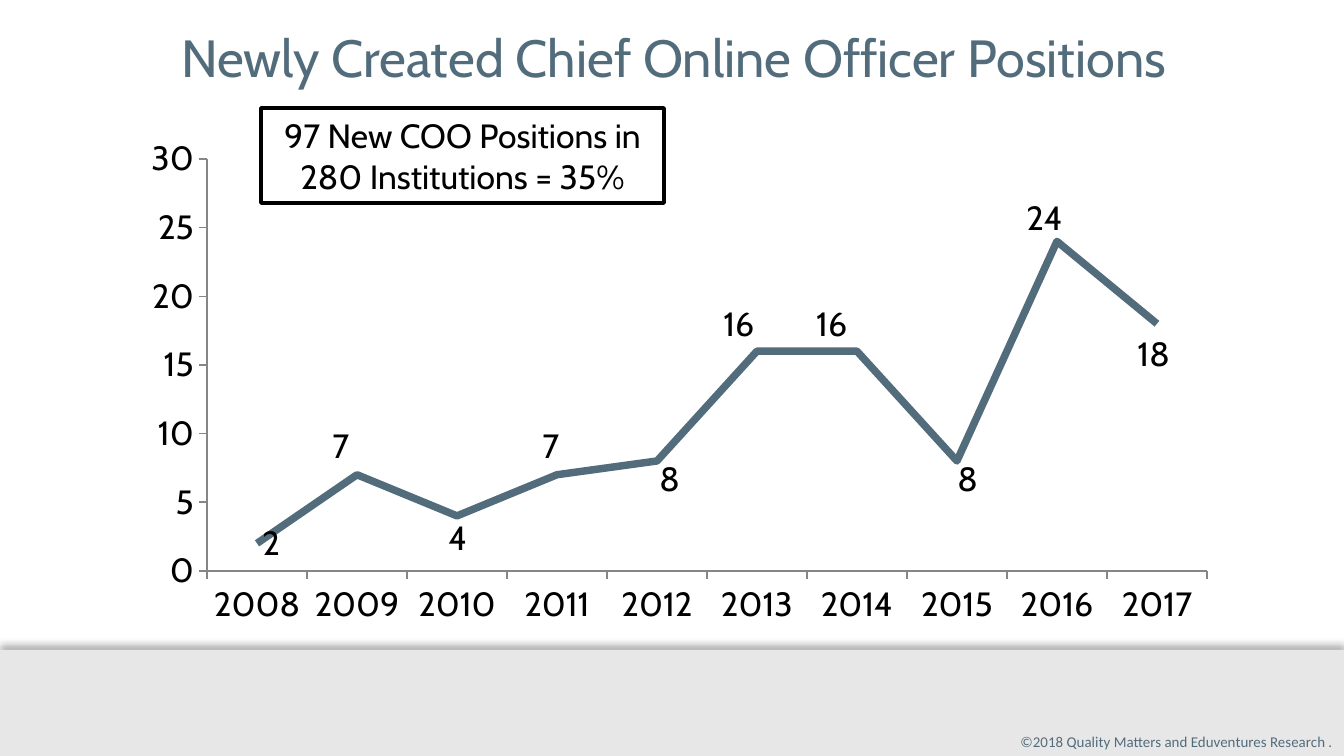
from lxml.etree import SubElement
from pptx import Presentation
from pptx.chart.data import CategoryChartData
from pptx.dml.color import RGBColor
from pptx.enum.chart import XL_CHART_TYPE, XL_LABEL_POSITION, XL_TICK_MARK
from pptx.enum.shapes import MSO_SHAPE
from pptx.enum.text import MSO_ANCHOR, PP_ALIGN
from pptx.oxml import parse_xml
from pptx.oxml.ns import nsdecls, qn
from pptx.util import Pt

EMU_PER_PX = 914400 / 134.4
THEME = {
    "slate": RGBColor.from_string("526C7C"),
    "black": RGBColor.from_string("000000"),
    "white": RGBColor.from_string("FFFFFF"),
    "footer": RGBColor.from_string("E7E7E7"),
    "axis": RGBColor.from_string("868686"),
    "font": "Cabin",
    "footer_font": "Calibri",
    "title_size": Pt(28),
    "body_size": Pt(18),
    "footer_size": Pt(8),
}


def px(*lengths):
    """Turn pixel lengths into a list of EMU."""
    return [round(length * EMU_PER_PX) for length in lengths]


def write_text(shape, text, alignment, font_format, margins=(13, 7, 13, 7)):
    frame = shape.text_frame
    frame.word_wrap = True
    frame.vertical_anchor = MSO_ANCHOR.MIDDLE
    for side, margin in zip(("left", "top", "right", "bottom"), px(*margins)):
        setattr(frame, f"margin_{side}", margin)
    paragraph = frame.paragraphs[0]
    paragraph.alignment = alignment
    run = paragraph.add_run()
    run.text = text
    run.font.color.rgb = font_format["color"]
    for name in ("name", "size"):
        setattr(run.font, name, font_format[name])


presentation = Presentation()
presentation.slide_width, presentation.slide_height = px(1344, 756)
slide = presentation.slides.add_slide(presentation.slide_layouts[6])
shapes = slide.shapes

# Footer band with a soft shadow along its top edge
footer = shapes.add_shape(MSO_SHAPE.RECTANGLE, *px(0, 650, 1344, 106))
footer.fill.solid()
footer.fill.fore_color.rgb = THEME["footer"]
footer.line.fill.background()
footer.shadow.inherit = False
effects = footer._element.spPr.find(qn("a:effectLst"))
effects.append(parse_xml(
    f'<a:outerShdw {nsdecls("a")} blurRad="{Pt(4)}" dist="{Pt(3)}" dir="16200000" rotWithShape="0">'
    '<a:srgbClr val="000000"><a:alpha val="30000"/></a:srgbClr></a:outerShdw>'))

copyright_box = shapes.add_textbox(*px(907, 725, 426, 32))
write_text(copyright_box, "©2018 Quality Matters and Eduventures Research .", PP_ALIGN.RIGHT,
           {"name": THEME["footer_font"], "size": THEME["footer_size"], "color": THEME["slate"]},
           margins=(13, 7, 0, 7))

# Line chart
CHART_LEFT, CHART_TOP, CHART_WIDTH, CHART_HEIGHT = 129, 129, 1099, 507
chart_data = CategoryChartData()
chart_data.categories = [str(year) for year in range(2008, 2018)]
chart_data.add_series("Series 1", (2, 7, 4, 7, 8, 16, 16, 8, 24, 18))
chart = shapes.add_chart(XL_CHART_TYPE.LINE,
                         *px(CHART_LEFT, CHART_TOP, CHART_WIDTH, CHART_HEIGHT), chart_data).chart
chart.has_legend = False
chart.has_title = False
chart.font.name = THEME["font"]
chart.font.size = THEME["body_size"]
chart.font.color.rgb = THEME["black"]

plot_area = chart._chartSpace.chart.plotArea
for old_layout in plot_area.findall(qn("c:layout")):
    plot_area.remove(old_layout)
plot_area.insert(0, parse_xml(
    f'<c:layout {nsdecls("c")}><c:manualLayout><c:layoutTarget val="inner"/>'
    '<c:xMode val="edge"/><c:yMode val="edge"/>'
    f'<c:x val="{(207 - CHART_LEFT) / CHART_WIDTH:.4f}"/>'
    f'<c:y val="{(159 - CHART_TOP) / CHART_HEIGHT:.4f}"/>'
    f'<c:w val="{1000 / CHART_WIDTH:.4f}"/><c:h val="{412 / CHART_HEIGHT:.4f}"/>'
    '</c:manualLayout></c:layout>'))

value_axis, category_axis = chart.value_axis, chart.category_axis
for name, value in {"minimum_scale": 0, "maximum_scale": 30, "major_unit": 5}.items():
    setattr(value_axis, name, value)
for axis in (value_axis, category_axis):
    axis.has_major_gridlines = False
    axis.major_tick_mark = XL_TICK_MARK.OUTSIDE
    axis.format.line.color.rgb = THEME["axis"]
    axis.format.line.width = Pt(0.75)

plot = chart.plots[0]
plot.vary_by_categories = False
series = plot.series[0]
series.smooth = False
series.format.line.color.rgb = THEME["slate"]
series.format.line.width = Pt(4)

# Labels sit right of their points, then shift by these pixels
label_shifts = [(0, 0), (-30, -28), (-14, 23), (-20, -28), (-3, 19),
                (-39, -27), (-46, -27), (-5, 19), (-36, -23), (-25, 31)]
series.data_labels.show_value = True
series.data_labels.position = XL_LABEL_POSITION.RIGHT
for index, (right, down) in enumerate(label_shifts):
    if (right, down) == (0, 0):
        continue
    series.points[index].data_label.position = XL_LABEL_POSITION.RIGHT
    label = series.data_labels._element.findall(qn("c:dLbl"))[-1]
    layout = label.makeelement(qn("c:layout"))
    manual_layout = SubElement(layout, qn("c:manualLayout"))
    for axis_name, shift in (("x", right / CHART_WIDTH), ("y", down / CHART_HEIGHT)):
        SubElement(manual_layout, qn(f"c:{axis_name}")).set("val", f"{shift:.4f}")
    label.insert(1, layout)

# Callout and title
callout = shapes.add_shape(MSO_SHAPE.RECTANGLE, *px(261, 108, 403, 95))
callout.fill.solid()
callout.fill.fore_color.rgb = THEME["white"]
callout.line.color.rgb = THEME["black"]
callout.line.width = Pt(2)
callout.shadow.inherit = False
write_text(callout, "97 New COO Positions in 280 Institutions = 35%", PP_ALIGN.CENTER,
           {"name": THEME["font"], "size": THEME["body_size"], "color": THEME["black"]})

title = shapes.add_textbox(*px(31, 18, 1285, 77))
write_text(title, "Newly Created Chief Online Officer Positions", PP_ALIGN.CENTER,
           {"name": THEME["font"], "size": THEME["title_size"], "color": THEME["slate"]})

presentation.save("out.pptx")
